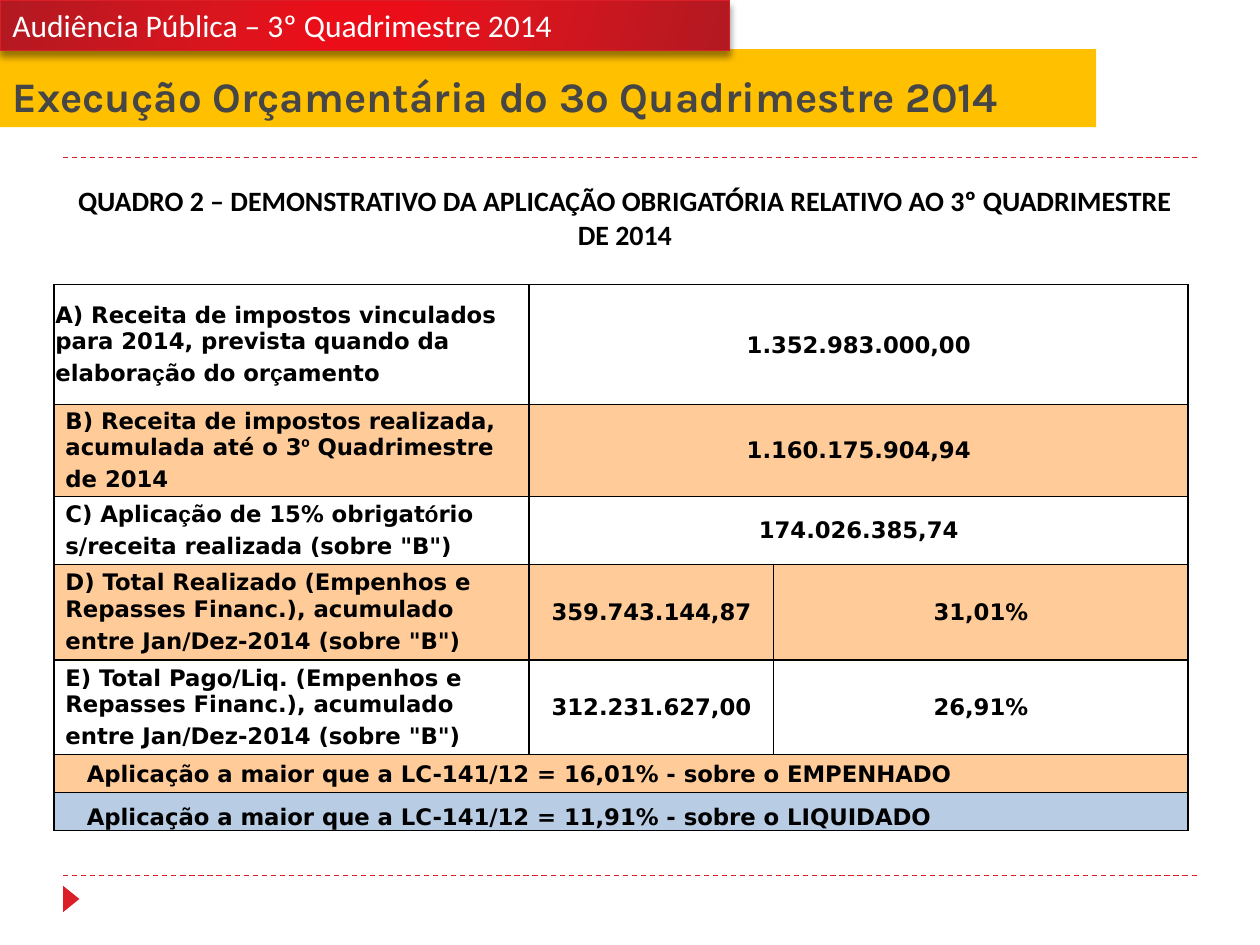
from itertools import groupby

from lxml.etree import SubElement
from pptx import Presentation
from pptx.dml.color import RGBColor
from pptx.enum.dml import MSO_LINE
from pptx.enum.shapes import MSO_CONNECTOR, MSO_SHAPE
from pptx.enum.text import MSO_ANCHOR as ANCHOR, PP_ALIGN as ALIGN
from pptx.oxml.ns import qn
from pptx.util import Inches, Pt

RED, BLACK, ORANGE, BLUE = "DA1F28", "000000", "FFCC99", "B8CCE4"
TABLE_FONT = "DejaVu Sans"
COLS = [3.77, 1.94, 3.29]
ROWS = [0.95, 0.73, 0.54, 0.76, 0.75, 0.3, 0.3]
# label, values, fill
RECORDS = [
    ("A) Receita de impostos vinculados para 2014, prevista quando da "
     "elaboração do orçamento", ["1.352.983.000,00"], None),
    ("B) Receita de impostos realizada, acumulada até o 3º Quadrimestre de 2014",
     ["1.160.175.904,94"], ORANGE),
    ('C) Aplicação de 15% obrigatório s/receita realizada (sobre "B")',
     ["174.026.385,74"], None),
    ("D) Total Realizado (Empenhos e Repasses Financ.), acumulado entre "
     'Jan/Dez-2014 (sobre "B")', ["359.743.144,87", "31,01%"], ORANGE),
    ("E) Total Pago/Liq. (Empenhos e Repasses Financ.), acumulado entre "
     'Jan/Dez-2014 (sobre "B")', ["312.231.627,00", "26,91%"], None),
    ("Aplicação a maior que a LC-141/12 = 16,01% - sobre o EMPENHADO", [], ORANGE),
    ("Aplicação a maior que a LC-141/12 = 11,91% - sobre o LIQUIDADO", [], BLUE),
]


def rgb(value):
    return RGBColor.from_string(value)


def place(shape, left, top, width, height):
    shape.left, shape.top = Inches(left), Inches(top)
    shape.width, shape.height = Inches(width), Inches(height)


def set_font(font, size, name, color, bold=False):
    font.size, font.name, font.bold = Pt(size), name, bold
    font.color.rgb = rgb(color)


def write(tf, text, size, name, color, bold=False, align=ALIGN.LEFT, anchor=ANCHOR.TOP):
    tf.word_wrap = True
    tf.vertical_anchor = anchor
    p = tf.paragraphs[0]
    p.text, p.alignment = text, align
    set_font(p.font, size, name, color, bold)


def add_rule(slide, y):
    line = slide.shapes.add_connector(
        MSO_CONNECTOR.STRAIGHT, Inches(0.5), Inches(y), Inches(9.5), Inches(y))
    line.line.color.rgb = rgb(RED)
    line.line.width = Pt(0.75)
    line.line.dash_style = MSO_LINE.DASH
    SubElement(line._element.spPr, qn("a:effectLst"))


def add_marker(slide):
    sp = slide.shapes.add_shape(MSO_SHAPE.ISOSCELES_TRIANGLE, 0, 0, 0, 0)
    place(sp, 0.46, 7.07, 0.21, 0.13)
    sp.rotation = 90
    sp.shadow.inherit = False
    sp.fill.solid()
    sp.fill.fore_color.rgb = rgb(RED)
    sp.line.fill.background()


def format_title(slide):
    title = slide.shapes.title
    place(title, 0, 0.39, 8.7, 0.62)
    title.fill.solid()
    title.fill.fore_color.rgb = rgb("FFC000")
    write(title.text_frame, "Execução Orçamentária do 3º Quadrimestre 2014",
          24, "Karla", "464646", True, anchor=ANCHOR.BOTTOM)


def add_caption(slide):
    box = slide.shapes.add_textbox(0, 0, 0, 0)
    place(box, 0.39, 1.41, 9.14, 0.64)
    write(box.text_frame, "QUADRO 2 – DEMONSTRATIVO DA APLICAÇÃO OBRIGATÓRIA "
          "RELATIVO AO 3º QUADRIMESTRE DE 2014", 16, "Calibri", BLACK, True, ALIGN.CENTER)


def set_gradient(sp, stops, angle):
    sp.fill.gradient()
    sp.fill.gradient_angle = angle
    stop_list = sp._element.spPr.find(".//" + qn("a:gsLst"))
    stop_list.clear()
    for percent, color in stops:
        stop = SubElement(stop_list, qn("a:gs"), pos=str(percent * 1000))
        SubElement(stop, qn("a:srgbClr"), val=color)


def add_drop_shadow(sp):
    sp.shadow.inherit = False
    effects = sp._element.spPr.find(qn("a:effectLst"))
    shadow = SubElement(effects, qn("a:outerShdw"), blurRad=str(Pt(4)),
                        dist=str(Pt(3.4)), dir="5400000", rotWithShape="0")
    color = SubElement(shadow, qn("a:srgbClr"), val=BLACK)
    SubElement(color, qn("a:alpha"), val="40000")


def add_banner(slide):
    sp = slide.shapes.add_shape(MSO_SHAPE.RECTANGLE, 0, 0, 0, 0)
    place(sp, 0, 0, 5.79, 0.4)
    half = [(0, "B21921"), (30, "D9151E"), (45, "EB0E19")]
    mirrored = [(100 - percent, color) for percent, color in reversed(half)]
    set_gradient(sp, half + mirrored, 344)
    sp.line.color.rgb = rgb(RED)
    sp.line.width = Pt(0.75)
    add_drop_shadow(sp)
    write(sp.text_frame, "Audiência Pública – 3º Quadrimestre 2014", 18, "Calibri", "FFFFFF")


def format_cell(cell, fill):
    tc_pr = cell._tc.get_or_add_tcPr()
    for side in ("lnL", "lnR", "lnT", "lnB"):
        border = SubElement(tc_pr, qn("a:" + side), w=str(Pt(1)))
        SubElement(SubElement(border, qn("a:solidFill")), qn("a:srgbClr"), val=BLACK)
    if fill:
        cell.fill.solid()
        cell.fill.fore_color.rgb = rgb(fill)
    else:
        cell.fill.background()
    cell.margin_left = cell.margin_top = cell.margin_right = Inches(0.01)
    cell.margin_bottom = 0


def fill_cell(cell, text, align=ALIGN.LEFT, anchor=ANCHOR.MIDDLE):
    write(cell.text_frame, text, 13, TABLE_FONT, BLACK, True, align)
    cell.vertical_anchor = anchor


def fill_label(cell, text):
    """Write a label with some letters in Arial and a taller space at its end."""
    p = cell.text_frame.paragraphs[0]
    pieces = [("Arial" if special else TABLE_FONT, 13, "".join(letters))
              for special, letters in groupby(text, lambda letter: letter in "çóº")]
    for name, size, piece in pieces + [("Arial", 17, " ")]:
        r = p.add_run()
        r.text = piece
        set_font(r.font, size, name, BLACK, True)
    cell.vertical_anchor = ANCHOR.MIDDLE


def add_results_table(slide):
    table = slide.shapes.add_table(
        len(ROWS), len(COLS), Inches(0.43), Inches(2.26),
        Inches(sum(COLS)), Inches(sum(ROWS))).table
    table.first_row = table.horz_banding = False
    for column, width in zip(table.columns, COLS):
        column.width = Inches(width)
    for i, (label, values, fill) in enumerate(RECORDS):
        table.rows[i].height = Inches(ROWS[i])
        cells = [table.cell(i, j) for j in range(len(COLS))]
        for cell in cells:
            format_cell(cell, fill)
        if not values:
            cells[0].merge(cells[-1])
            cells[0].margin_left = Inches(0.26)
            fill_cell(cells[0], label, anchor=ANCHOR.BOTTOM if fill == BLUE else ANCHOR.MIDDLE)
            continue
        if i > 0:
            cells[0].margin_left = Inches(0.09)
        fill_label(cells[0], label)
        if len(values) == 1:
            cells[1].merge(cells[2])
        for cell, value in zip(cells[1:], values):
            fill_cell(cell, value, ALIGN.CENTER)


def main():
    prs = Presentation()
    prs.slide_width, prs.slide_height = Inches(10), Inches(7.5)
    slide = prs.slides.add_slide(prs.slide_layouts[5])
    for y in (6.95, 1.25):
        add_rule(slide, y)
    add_marker(slide)
    format_title(slide)
    add_caption(slide)
    add_banner(slide)
    add_results_table(slide)
    prs.save("out.pptx")


if __name__ == "__main__":
    main()
